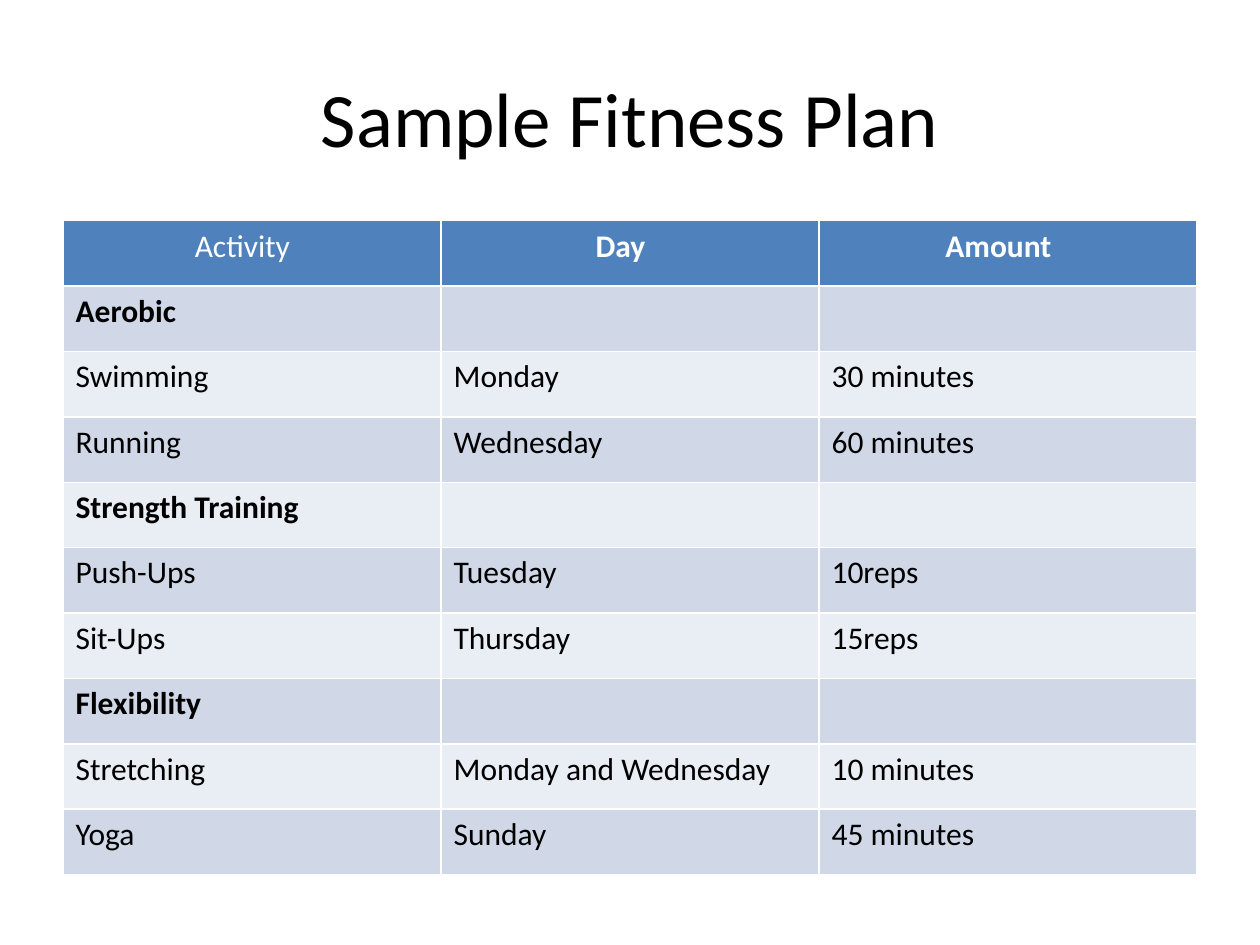
import pptx
import pptx.util
from pptx.dml.color import RGBColor
from pptx.enum.text import MSO_ANCHOR, PP_ALIGN
from pptx.util import Cm, Pt

TITLE = "Sample Fitness Plan"
HEADS = [("Activity", False), ("Day", True), ("Amount", True)]
PLAN = [
    ("Aerobic", [("Swimming", "Monday", "30 minutes"),
                 ("Running", "Wednesday", "60 minutes")]),
    ("Strength Training", [("Push-Ups", "Tuesday", "10reps"),
                           ("Sit-Ups", "Thursday", "15reps")]),
    ("Flexibility", [("Stretching", "Monday and Wednesday", "10 minutes"),
                     ("Yoga", "Sunday", "45 minutes")]),
]

FONT = "Calibri"
BLACK = RGBColor(0x00, 0x00, 0x00)
WHITE = RGBColor(0xFF, 0xFF, 0xFF)
BLUE = RGBColor(0x4F, 0x81, 0xBD)
BANDS = [RGBColor(0xD0, 0xD8, 0xE8), RGBColor(0xE9, 0xED, 0xF4)]

LEFT, WIDTH = Cm(1.27), Cm(22.86)
TOP, HEIGHT = Cm(4.45), Cm(13.18)


def write(frame, text, size, color, bold=False, align=PP_ALIGN.LEFT):
    para = frame.paragraphs[0]
    para.alignment = align
    run = para.add_run()
    run.text = text
    font = run.font
    font.name, font.size, font.bold = FONT, Pt(size), bold
    font.color.rgb = color


def paint(cell, color):
    cell.fill.solid()
    cell.fill.fore_color.rgb = color


def main():
    deck = pptx.Presentation()
    deck.slide_width, deck.slide_height = Cm(25.4), Cm(19.05)
    slide = deck.slides.add_slide(deck.slide_layouts[5])

    title = slide.shapes.title
    title.left, title.top = LEFT, Cm(0.76)
    title.width, title.height = WIDTH, Cm(3.18)
    title.text_frame.vertical_anchor = MSO_ANCHOR.MIDDLE
    write(title.text_frame, TITLE, 44, BLACK, align=PP_ALIGN.CENTER)

    rows = []
    for group, items in PLAN:
        rows.append(((group, "", ""), True))
        rows += [(item, False) for item in items]

    table = slide.shapes.add_table(
        len(rows) + 1, len(HEADS), LEFT, TOP, WIDTH, HEIGHT).table

    for col, (head, bold) in enumerate(HEADS):
        cell = table.cell(0, col)
        paint(cell, BLUE)
        cell.margin_right = Cm(0.64)
        write(cell.text_frame, head, 18, WHITE, bold, PP_ALIGN.CENTER)

    for row, (texts, bold) in enumerate(rows, 1):
        for col, text in enumerate(texts):
            cell = table.cell(row, col)
            paint(cell, BANDS[(row - 1) % 2])
            if text:
                write(cell.text_frame, text, 18, BLACK, bold)

    deck.save("out.pptx")


if __name__ == "__main__":
    main()
